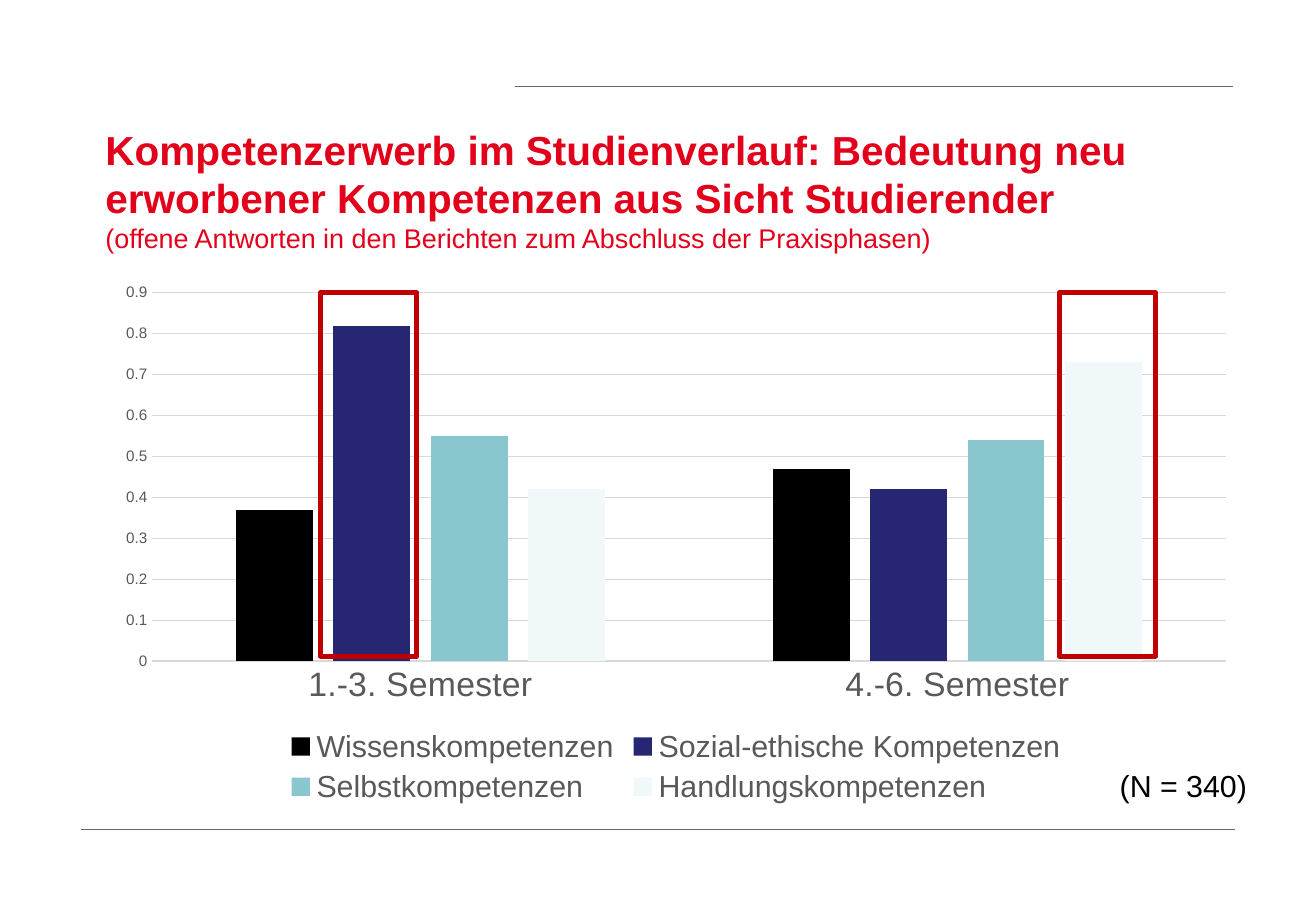
from lxml import etree
from pptx import Presentation
from pptx.chart.data import CategoryChartData
from pptx.dml.color import RGBColor
from pptx.enum.chart import XL_CHART_TYPE, XL_LEGEND_POSITION, XL_TICK_MARK
from pptx.enum.shapes import MSO_CONNECTOR, MSO_SHAPE
from pptx.enum.text import MSO_ANCHOR
from pptx.oxml.ns import qn
from pptx.util import Pt

COLUMNS = XL_CHART_TYPE.COLUMN_CLUSTERED
BOTTOM = XL_LEGEND_POSITION.BOTTOM
NO_TICK = XL_TICK_MARK.NONE
STRAIGHT = MSO_CONNECTOR.STRAIGHT
RECT = MSO_SHAPE.RECTANGLE
MIDDLE = MSO_ANCHOR.MIDDLE
TOP = MSO_ANCHOR.TOP

FONT = "Arial"
COLORS = {
    "title": "E2001A",
    "text": "000000",
    "label": "595959",
    "grid": "D9D9D9",
    "rule": "5C6971",
    "frame": "C00000",
}
TERMS = ["1.-3. Semester", "4.-6. Semester"]
SKILLS = [
    ("Wissenskompetenzen", (0.37, 0.47), "000000"),
    ("Sozial-ethische Kompetenzen", (0.82, 0.42), "262673"),
    ("Selbstkompetenzen", (0.55, 0.54), "8AC6CD"),
    ("Handlungskompetenzen", (0.42, 0.73), "F0F8F9"),
]
TITLE = [
    ("Kompetenzerwerb im Studienverlauf: Bedeutung neu "
     "erworbener Kompetenzen aus Sicht Studierender", 24, True),
    ("(offene Antworten in den Berichten zum Abschluss der Praxisphasen)",
     16, False),
]


def rgb(name):
    return RGBColor.from_string(COLORS[name])


def set_font(font, size, color, bold=False):
    font.name = FONT
    font.size = Pt(size)
    font.bold = bold
    font.color.rgb = rgb(color)


def set_line(line, color, width):
    line.color.rgb = rgb(color)
    line.width = Pt(width)


def add_rule(slide, left, right, top):
    rule = slide.shapes.add_connector(
        STRAIGHT, Pt(left), Pt(top), Pt(right), Pt(top))
    set_line(rule.line, "rule", 0.25)
    etree.SubElement(rule.line._get_or_add_ln().getparent(),
                     qn("a:effectLst"))


def add_text(slide, area, parts, color, anchor):
    """Add a text box with one paragraph per (text, size, bold) part."""
    box = slide.shapes.add_textbox(*map(Pt, area))
    frame = box.text_frame
    frame.word_wrap = True
    frame.vertical_anchor = anchor
    frame.text = "\n".join(text for text, _, _ in parts)
    for para, (_, size, bold) in zip(frame.paragraphs, parts):
        set_font(para.runs[0].font, size, color, bold)


def add_columns(slide, area):
    data = CategoryChartData()
    data.categories = TERMS
    for name, values, _ in SKILLS:
        data.add_series(name, values)
    chart = slide.shapes.add_chart(COLUMNS, *map(Pt, area), data).chart
    chart.has_title = False
    set_font(chart.font, 10, "text")

    plot = chart.plots[0]
    plot.vary_by_categories = False
    plot.gap_width = 219
    plot.overlap = -27
    for series, (_, _, color) in zip(plot.series, SKILLS):
        series.format.fill.solid()
        series.format.fill.fore_color.rgb = RGBColor.from_string(color)

    for axis, size in ((chart.category_axis, 20), (chart.value_axis, 9)):
        axis.major_tick_mark = axis.minor_tick_mark = NO_TICK
        set_font(axis.tick_labels.font, size, "label")
    set_line(chart.category_axis.format.line, "grid", 0.75)
    scale = chart.value_axis
    scale.minimum_scale, scale.maximum_scale = 0, 0.9
    scale.major_unit = 0.1
    scale.format.line.fill.background()
    set_line(scale.major_gridlines.format.line, "grid", 0.75)

    chart.has_legend = True
    chart.legend.position = BOTTOM
    chart.legend.include_in_layout = False
    set_font(chart.legend.font, 18, "label")


def add_frame(slide, left):
    """Outline one column of the chart."""
    frame = slide.shapes.add_shape(
        RECT, Pt(left), Pt(173.5), Pt(57), Pt(215.5))
    frame.shadow.inherit = False
    frame.fill.background()
    set_line(frame.line, "frame", 3)


def main():
    deck = Presentation()
    deck.slide_width, deck.slide_height = Pt(780), Pt(540)
    slide = deck.slides.add_slide(deck.slide_layouts[6])
    add_rule(slide, 48.2, 732.2, 491.8)
    add_rule(slide, 305.3, 730.8, 51.1)
    add_text(slide, (55.4, 79.2, 684.7, 66.2), TITLE, "title", MIDDLE)
    add_text(slide, (656.6, 451.4, 110.9, 28.8),
             [("(N = 340)", 18, False)], "text", TOP)
    add_columns(slide, (61.2, 162, 679, 318.2))
    for left in (190.1, 627.8):
        add_frame(slide, left)
    deck.save("out.pptx")


if __name__ == "__main__":
    main()
